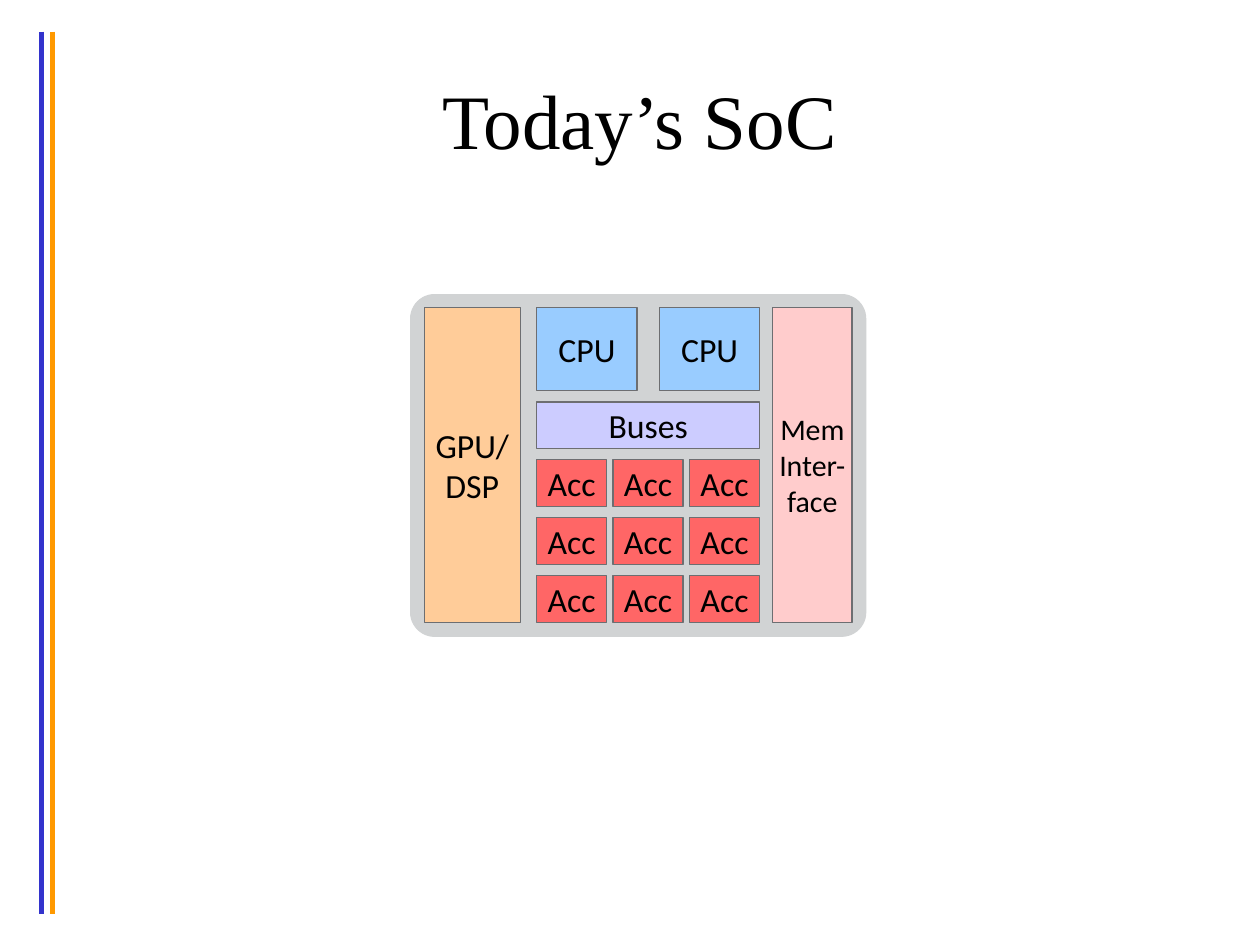
from lxml import etree
from pptx import Presentation
from pptx.dml.color import RGBColor
from pptx.enum import shapes, text
from pptx.oxml import ns
from pptx.util import Pt

# Content: bars are (x, colour); blocks are (label, x, y, w, h, fill, size)
TITLE = "Today’s SoC"
BARS = [(23.9, "3333CC"), (30.1, "FF9900")]
CHIP = (234.7, 168.4, 260, 195.2)
TOP, MID = 175.7, 306.7
BLOCKS = [
    ("GPU/DSP", 242.6, TOP, 54.7, 180, "FFCC99", 19.3),
    ("Buses", MID, 229.8, 127.5, 26.6, "CCCCFF", 19.3),
    ("Mem\nInter-\nface", 441.5, TOP, 45.4, 180, "FFCCCC", 17.1),
]
# Grids: (label, rows, cols, x, y, w, h, x step, y step, fill, size)
GRIDS = [
    ("CPU", 1, 2, MID, TOP, 57.4, 47.5, 70.1, 0, "99CCFF", 19.3),
    ("Acc", 3, 3, MID, 262.8, 39.9, 26.6, 43.7, 33.1, "FF6666", 19.3),
]


def rgb(code):
    return RGBColor.from_string(code)


def style(frame, size, font):
    frame.word_wrap = True
    frame.vertical_anchor = text.MSO_ANCHOR.MIDDLE
    for para in frame.paragraphs:
        para.alignment = text.PP_ALIGN.CENTER
        for run in para.runs:
            run.font.size = Pt(size)
            run.font.name = font
            run.font.color.rgb = rgb("000000")


def add_box(group, kind, place, fill, edge):
    box = group.shapes.add_shape(kind, *map(Pt, place))
    box.shadow.inherit = False
    box.fill.solid()
    box.fill.fore_color.rgb = rgb(fill)
    box.line.color.rgb = rgb(edge)
    box.line.width = Pt(0.75)
    return box


def add_block(group, label, x, y, w, h, fill, size):
    box = add_box(group, shapes.MSO_SHAPE.RECTANGLE, (x, y, w, h), fill, "6D6E71")
    frame = box.text_frame
    frame.text = label
    frame.margin_left = frame.margin_right = 0
    frame.margin_top = frame.margin_bottom = 0
    style(frame, size, "Calibri")


def add_bar(slide, x, color):
    bar = slide.shapes.add_connector(
        shapes.MSO_CONNECTOR.STRAIGHT, Pt(x), Pt(18), Pt(x), Pt(522))
    bar.line.color.rgb = rgb(color)
    bar.line.width = Pt(3)
    etree.SubElement(bar._element.spPr, ns.qn("a:effectLst"))


def main():
    deck = Presentation()
    deck.slide_width, deck.slide_height = Pt(720), Pt(540)
    slide = deck.slides.add_slide(deck.slide_layouts[5])

    # Side bars
    for x, color in BARS:
        add_bar(slide, x, color)

    # Title
    title = slide.shapes.title
    title.left, title.top, title.width, title.height = map(Pt, (20.2, 25.2, 690.5, 85.7))
    title.text_frame.text = TITLE
    style(title.text_frame, 44, "Times New Roman")

    # Chip and its blocks
    group = slide.shapes.add_group_shape()
    chip = add_box(group, shapes.MSO_SHAPE.ROUNDED_RECTANGLE, CHIP, "D1D3D4", "D1D3D4")
    chip.adjustments[0] = 0.07
    for block in BLOCKS:
        add_block(group, *block)
    for label, rows, cols, x, y, w, h, dx, dy, fill, size in GRIDS:
        for row in range(rows):
            for col in range(cols):
                add_block(group, label, x + col * dx, y + row * dy, w, h, fill, size)

    deck.save("out.pptx")


if __name__ == "__main__":
    main()
